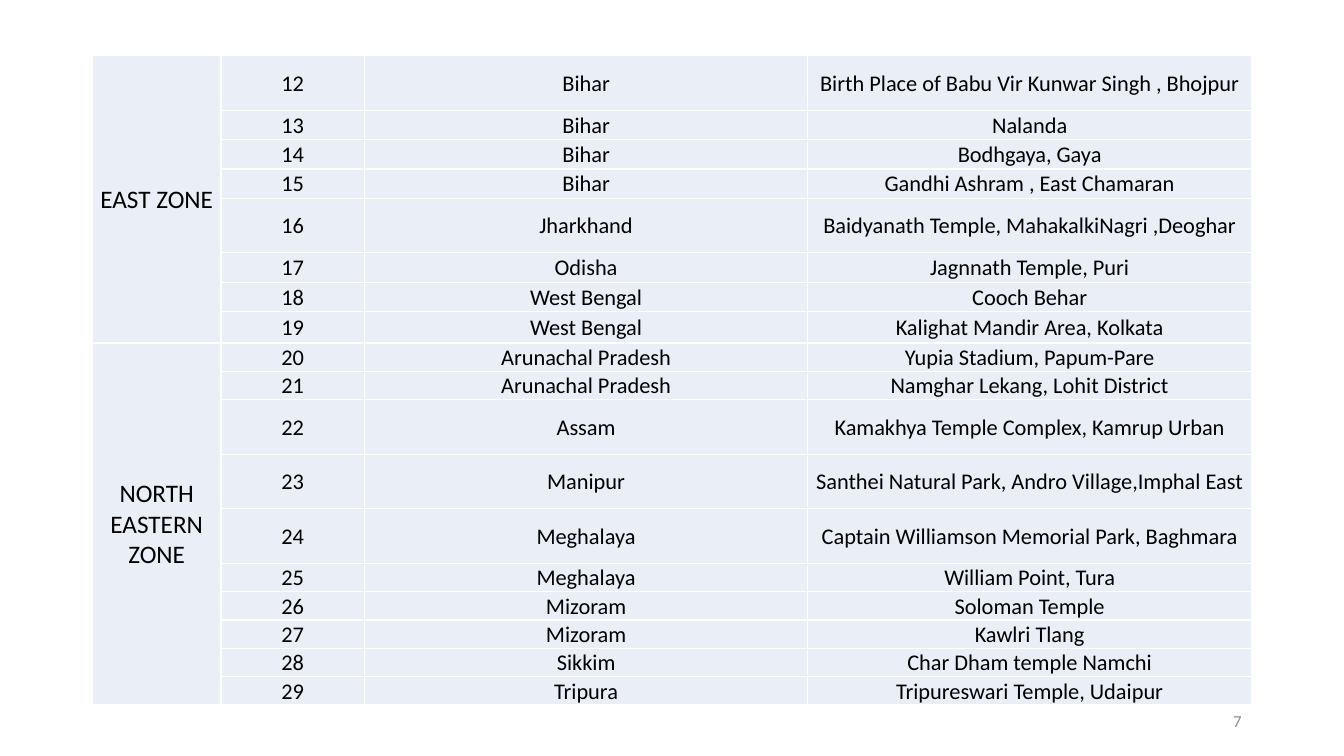
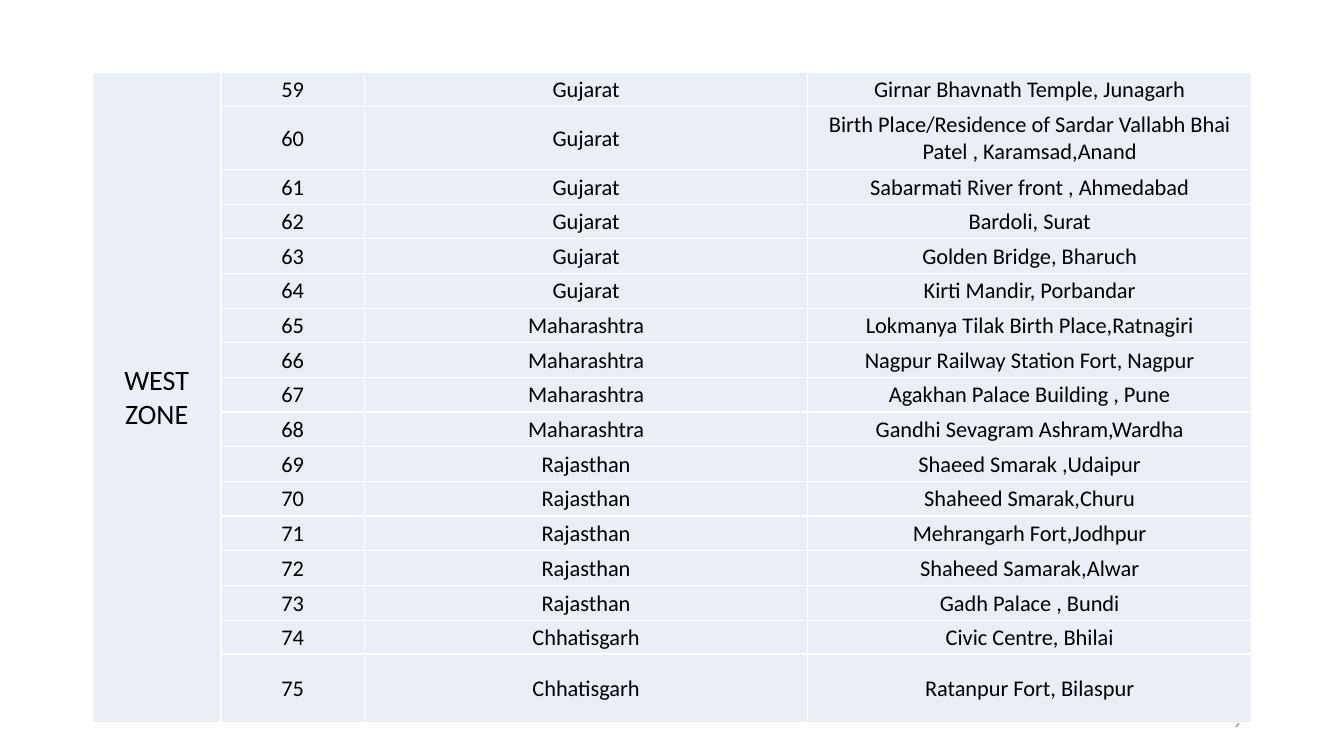
from lxml import etree
from pptx import Presentation
from pptx.dml.color import RGBColor
from pptx.enum.text import MSO_ANCHOR, PP_ALIGN
from pptx.oxml.ns import qn
from pptx.util import Emu, Pt

MIDDLE = MSO_ANCHOR.MIDDLE
CENTER = PP_ALIGN.CENTER
RIGHT = PP_ALIGN.RIGHT

FONT = "Calibri"
BLACK = RGBColor(0x00, 0x00, 0x00)
GRAY = RGBColor(0x8C, 0x8C, 0x8C)
PALE = RGBColor(0xEA, 0xEF, 0xF7)
WHITE = RGBColor(0xFF, 0xFF, 0xFF)

SCALE = 914400 / 192
LEFT = 176
COLS = [245, 273, 845, 845]
INSET = 2

EAST = [
    (104, "Bihar", "Birth Place of Babu Vir Kunwar Singh , Bhojpur"),
    (56, "Bihar", "Nalanda"),
    (56, "Bihar", "Bodhgaya, Gaya"),
    (56, "Bihar", "Gandhi Ashram , East Chamaran"),
    (104, "Jharkhand", "Baidyanath Temple, MahakalkiNagri ,Deoghar"),
    (56, "Odisha", "Jagnnath Temple, Puri"),
    (56, "West Bengal", "Cooch Behar"),
    (59, "West Bengal", "Kalighat Mandir Area, Kolkata"),
]
NORTH = [
    (54, "Arunachal Pradesh", "Yupia Stadium, Papum-Pare"),
    (54, "Arunachal Pradesh", "Namghar Lekang, Lohit District"),
    (104, "Assam", "Kamakhya Temple Complex, Kamrup Urban"),
    (104, "Manipur", "Santhei Natural Park, Andro Village,Imphal East"),
    (104, "Meghalaya", "Captain Williamson Memorial Park, Baghmara"),
    (54, "Meghalaya", "William Point, Tura"),
    (54, "Mizoram", "Soloman Temple"),
    (54, "Mizoram", "Kawlri Tlang"),
    (54, "Sikkim", "Char Dham temple Namchi"),
    (54, "Tripura", "Tripureswari Temple, Udaipur"),
]
WEST = [
    (66, "Gujarat", "Girnar Bhavnath Temple, Junagarh"),
    (120, "Gujarat", "Birth Place/Residence of Sardar Vallabh Bhai Patel , Karamsad,Anand"),
    (66, "Gujarat", "Sabarmati River front , Ahmedabad"),
    (66, "Gujarat", "Bardoli, Surat"),
    (66, "Gujarat", "Golden Bridge, Bharuch"),
    (66, "Gujarat", "Kirti Mandir, Porbandar"),
    (66, "Maharashtra", "Lokmanya Tilak Birth Place,Ratnagiri"),
    (66, "Maharashtra", "Nagpur Railway Station Fort, Nagpur"),
    (66, "Maharashtra", "Agakhan Palace Building , Pune"),
    (66, "Maharashtra", "Gandhi Sevagram Ashram,Wardha"),
    (66, "Rajasthan", "Shaeed Smarak ,Udaipur"),
    (66, "Rajasthan", "Shaheed Smarak,Churu"),
    (66, "Rajasthan", "Mehrangarh Fort,Jodhpur"),
    (66, "Rajasthan", "Shaheed Samarak,Alwar"),
    (67, "Rajasthan", "Gadh Palace , Bundi"),
    (64, "Chhatisgarh", "Civic Centre, Bhilai"),
    (130, "Chhatisgarh", "Ratanpur Fort, Bilaspur"),
]
PAGES = [
    ("7", 106, 12, [("EAST ZONE", 18, EAST), ("NORTH EASTERN ZONE", 18, NORTH)]),
    ("9", 137, 59, [("WEST ZONE", 20, WEST)]),
]


def px(num):
    return Emu(round(num * SCALE))


def put(frame, text, size, color, align):
    para = frame.paragraphs[0]
    para.text = text
    para.alignment = align
    for run in para.runs:
        run.font.name = FONT
        run.font.size = Pt(size)
        run.font.color.rgb = color


deck = Presentation()
deck.slide_width = px(2560)
deck.slide_height = px(1440)

for page, top, first, zones in PAGES:
    slide = deck.slides.add_slide(deck.slide_layouts[6])
    foot = slide.shapes.add_textbox(px(1808), px(1335), px(576), px(77)).text_frame
    foot.word_wrap = True
    foot.vertical_anchor = MIDDLE
    put(foot, page, 12, GRAY, RIGHT)

    sites = [site for zone in zones for site in zone[2]]
    tall = sum(site[0] for site in sites)
    frame = slide.shapes.add_table(
        len(sites), len(COLS), px(LEFT), px(top), px(sum(COLS)), px(tall)
    )
    table = frame.table
    table.first_row = False
    table.horz_banding = False
    for col, wide in zip(table.columns, COLS):
        col.width = px(wide)

    for cell in table.iter_cells():
        cell.margin_left = cell.margin_right = cell.margin_top = px(INSET)
        cell.margin_bottom = 0
        cell.vertical_anchor = MIDDLE
        props = cell._tc.get_or_add_tcPr()
        for side in ("a:lnL", "a:lnR", "a:lnT", "a:lnB"):
            line = etree.SubElement(props, qn(side), w=str(Pt(1)))
            fill = etree.SubElement(line, qn("a:solidFill"))
            etree.SubElement(fill, qn("a:srgbClr"), val=str(WHITE))
        cell.fill.solid()
        cell.fill.fore_color.rgb = PALE

    for row, (high, state, place) in enumerate(sites):
        table.rows[row].height = px(high)
        for col, text in enumerate((str(first + row), state, place), 1):
            put(table.cell(row, col).text_frame, text, 16, BLACK, CENTER)

    start = 0
    for name, size, group in zones:
        head = table.cell(start, 0)
        start += len(group)
        head.merge(table.cell(start - 1, 0))
        put(head.text_frame, name, size, BLACK, CENTER)

deck.save("out.pptx")
